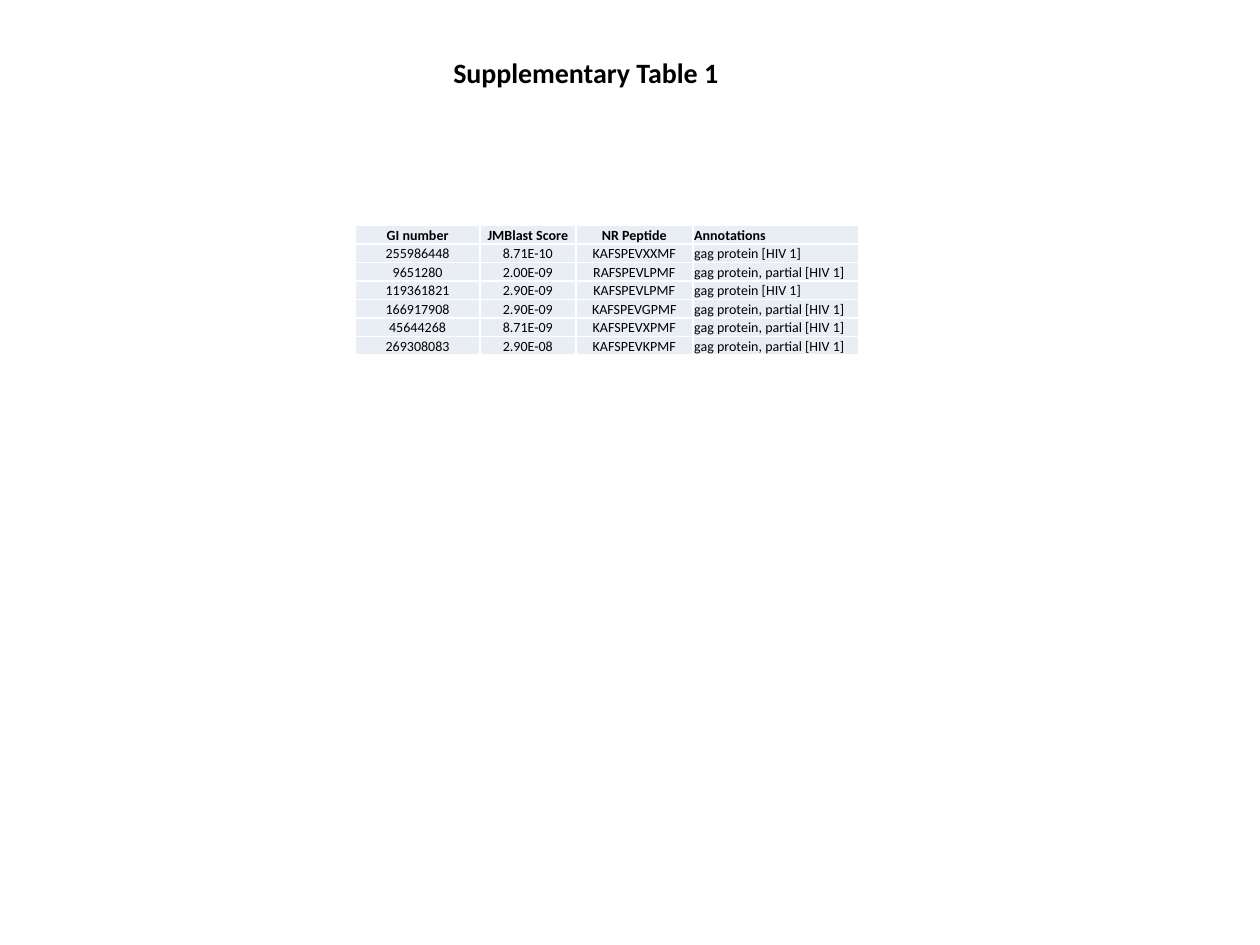
import pptx
import pptx.dml.color
import pptx.enum.text
import pptx.oxml
import pptx.oxml.ns
import pptx.util

Inches = pptx.util.Inches
Pt = pptx.util.Pt
ALIGN = pptx.enum.text.PP_ALIGN
ANCHOR = pptx.enum.text.MSO_ANCHOR

COLORS = {"text": "000000", "cell": "E9EDF4", "border": "FFFFFF"}
FONT = "Calibri"

HEADER = ("GI number", "JMBlast Score", "NR Peptide", "Annotations")
WHOLE = "gag protein [HIV 1]"
PARTIAL = "gag protein, partial [HIV 1]"
HITS = [
    ("255986448", "8.71E-10", "KAFSPEVXXMF", WHOLE),
    ("9651280", "2.00E-09", "RAFSPEVLPMF", PARTIAL),
    ("119361821", "2.90E-09", "KAFSPEVLPMF", WHOLE),
    ("166917908", "2.90E-09", "KAFSPEVGPMF", PARTIAL),
    ("45644268", "8.71E-09", "KAFSPEVXPMF", PARTIAL),
    ("269308083", "2.90E-08", "KAFSPEVKPMF", PARTIAL),
]
COLUMN_WIDTHS = (0.99, 0.76, 0.93, 1.32)
COLUMN_ALIGNS = (ALIGN.CENTER, ALIGN.CENTER, ALIGN.CENTER, ALIGN.LEFT)
HEADER_HEIGHT, HIT_HEIGHT = 0.06, 0.13


def rgb(name):
    return pptx.dml.color.RGBColor.from_string(COLORS[name])


def write(frame, text, size, bold, align):
    para = frame.paragraphs[0]
    para.alignment = align
    span = para.add_run()
    span.text = text
    span.font.name = FONT
    span.font.size = Pt(size)
    span.font.bold = bold
    span.font.color.rgb = rgb("text")


def add_borders(cell, width):
    properties = cell._tc.get_or_add_tcPr()
    for side in ("lnL", "lnR", "lnT", "lnB"):
        properties.append(pptx.oxml.parse_xml(
            f'<a:{side} {pptx.oxml.ns.nsdecls("a")} w="{Pt(width)}">'
            f'<a:solidFill><a:srgbClr val="{COLORS["border"]}"/></a:solidFill>'
            f'</a:{side}>'))


def place_title(page, left, top, width, height):
    title = page.shapes.title
    title.left, title.top = Inches(left), Inches(top)
    title.width, title.height = Inches(width), Inches(height)
    title.text_frame.vertical_anchor = ANCHOR.MIDDLE
    write(title.text_frame, "Supplementary Table 1", 16, True, ALIGN.CENTER)


def format_cell(cell, text, bold, align):
    cell.margin_left = cell.margin_right = cell.margin_top = Inches(0.01)
    cell.margin_bottom = 0
    cell.vertical_anchor = ANCHOR.BOTTOM
    add_borders(cell, 1)
    cell.fill.solid()
    cell.fill.fore_color.rgb = rgb("cell")
    write(cell.text_frame, text, 8, bold, align)


def place_hits_table(page, left, top, width, height):
    rows = [HEADER, *HITS]
    table = page.shapes.add_table(
        len(rows), len(HEADER), Inches(left), Inches(top),
        Inches(width), Inches(height)).table
    for column, column_width in zip(table.columns, COLUMN_WIDTHS):
        column.width = Inches(column_width)
    for r, values in enumerate(rows):
        table.rows[r].height = Inches(HIT_HEIGHT if r else HEADER_HEIGHT)
        for c, (text, align) in enumerate(zip(values, COLUMN_ALIGNS)):
            format_cell(table.cell(r, c), text, r == 0, align)


def main():
    deck = pptx.Presentation()
    deck.slide_width, deck.slide_height = Inches(10), Inches(7.5)
    page = deck.slides.add_slide(deck.slide_layouts.get_by_name("Title Only"))
    place_title(page, 0.15, -0.05, 9, 1.25)
    place_hits_table(page, 2.82, 1.79, 4, 1)
    deck.save("out.pptx")


if __name__ == "__main__":
    main()
